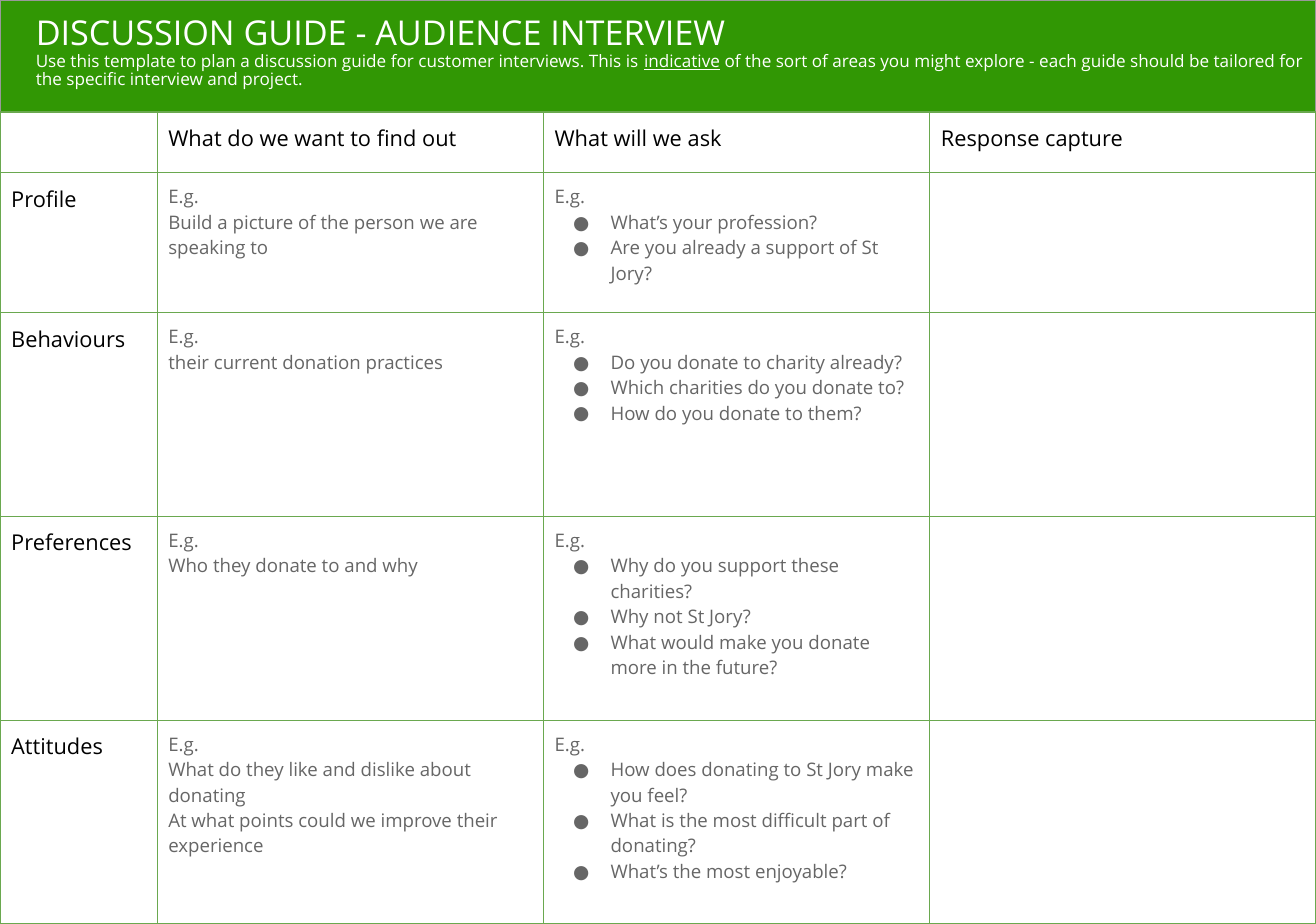
from lxml import etree
from pptx import Presentation
from pptx.dml.color import RGBColor
from pptx.enum import shapes, text
from pptx.oxml import ns
from pptx.util import Pt

GREEN = RGBColor(0x31, 0x97, 0x04)
RULE = RGBColor(0x6A, 0xA8, 0x4F)
EDGE = RGBColor(0x99, 0x99, 0x99)
WHITE = RGBColor(0xFF, 0xFF, 0xFF)
BLACK = RGBColor(0, 0, 0)
GREY = RGBColor(0x66, 0x66, 0x66)
FONT = "Open Sans"
WIDTH, HEIGHT, BAND = 846, 594, 72

TITLE = "DISCUSSION GUIDE - AUDIENCE INTERVIEW"
INTRO = ("Use this template to plan a discussion guide for customer interviews. This is ",
         "indicative",
         " of the sort of areas you might explore - each guide should be tailored for"
         " the specific interview and project.")
HEADS = ("", "What do we want to find out", "What will we ask", "Response capture")
TOPICS = (
    ("Profile",
     ["Build a picture of the person we are speaking to"],
     ["What’s your profession?", "Are you already a support of St Jory?"]),
    ("Behaviours",
     ["their current donation practices"],
     ["Do you donate to charity already?", "Which charities do you donate to?",
      "How do you donate to them?"]),
    ("Preferences",
     ["Who they donate to and why"],
     ["Why do you support these charities?", "Why not St Jory?",
      "What would make you donate more in the future?"]),
    ("Attitudes",
     ["What do they like and dislike about donating",
      "At what points could we improve their experience"],
     ["How does donating to St Jory make you feel?",
      "What is the most difficult part of donating?", "What’s the most enjoyable?"]),
)
COLS = (101, 248.33, 248.33, 248.34)
ROWS = (39, 90, 131, 131, 131)


def add(parent, tag, **attrs):
    return etree.SubElement(parent, ns.qn(tag), attrs)


def write(frame, runs, size=12, color=GREY, first=False, bullet=False,
          spacing=None, under=None):
    """Write one paragraph; the run with index under is underlined."""
    para = frame.paragraphs[0] if first else frame.add_paragraph()
    if spacing:
        para.line_spacing = spacing
    for i, words in enumerate(runs):
        run = para.add_run()
        run.text = words
        run.font.name = FONT
        run.font.size = Pt(size)
        run.font.color.rgb = color
        if i == under:
            run.font.underline = True
    if bullet:
        props = para._p.get_or_add_pPr()
        props.set("marL", str(Pt(36)))
        props.set("indent", str(Pt(-24)))
        add(add(props, "a:buClr"), "a:srgbClr", val=str(color))
        add(props, "a:buFont", typeface=FONT)
        add(props, "a:buChar", char="●")


def header(slide, left, top, width, height):
    band = slide.shapes.add_shape(shapes.MSO_SHAPE.RECTANGLE, Pt(left), Pt(top),
                                  Pt(width), Pt(height))
    band.shadow.inherit = False
    band.fill.solid()
    band.fill.fore_color.rgb = GREEN
    band.line.color.rgb = EDGE
    band.line.width = Pt(0.75)

    box = slide.shapes.add_textbox(Pt(left + 15), Pt(top + 2), Pt(width), Pt(96))
    frame = box.text_frame
    frame.word_wrap = True
    frame.vertical_anchor = text.MSO_ANCHOR.TOP
    frame.margin_left = frame.margin_right = Pt(8)
    frame.margin_top = frame.margin_bottom = Pt(8)
    write(frame, [TITLE], size=22, color=WHITE, first=True, spacing=0.9)
    write(frame, INTRO, size=11, color=WHITE, spacing=0.9, under=1)


def style(cell):
    """Give a cell its margins, green rules and no fill."""
    cell.margin_left = cell.margin_right = Pt(7.2)
    cell.margin_top = cell.margin_bottom = Pt(7.2)
    props = cell._tc.get_or_add_tcPr()
    for side in "LRTB":
        line = add(props, "a:ln" + side, w=str(Pt(0.75)))
        add(add(line, "a:solidFill"), "a:srgbClr", val=str(RULE))
    cell.fill.background()


def guide(slide, left, top, width, height):
    grid = slide.shapes.add_table(len(ROWS), len(COLS), Pt(left), Pt(top),
                                  Pt(width), Pt(height)).table
    grid.first_row = grid.horz_banding = False
    for col, size in zip(grid.columns, COLS):
        col.width = Pt(size)
    for row, size in zip(grid.rows, ROWS):
        row.height = Pt(size)
    for cell in grid.iter_cells():
        style(cell)

    for col, head in enumerate(HEADS):
        if head:
            write(grid.cell(0, col).text_frame, [head], size=14, color=BLACK, first=True)
    for row, (topic, goals, asks) in enumerate(TOPICS, 1):
        write(grid.cell(row, 0).text_frame, [topic], size=14, color=BLACK, first=True)
        for col, items in enumerate((goals, asks), 1):
            frame = grid.cell(row, col).text_frame
            write(frame, ["E.g."], first=True)
            for item in items:
                write(frame, [item], bullet=items is asks)


def main():
    deck = Presentation()
    deck.slide_width, deck.slide_height = Pt(WIDTH), Pt(HEIGHT)
    slide = deck.slides.add_slide(deck.slide_layouts[6])
    header(slide, 0, 0, WIDTH, BAND)
    guide(slide, 0, BAND, WIDTH, HEIGHT - BAND)
    deck.save("out.pptx")


if __name__ == "__main__":
    main()
